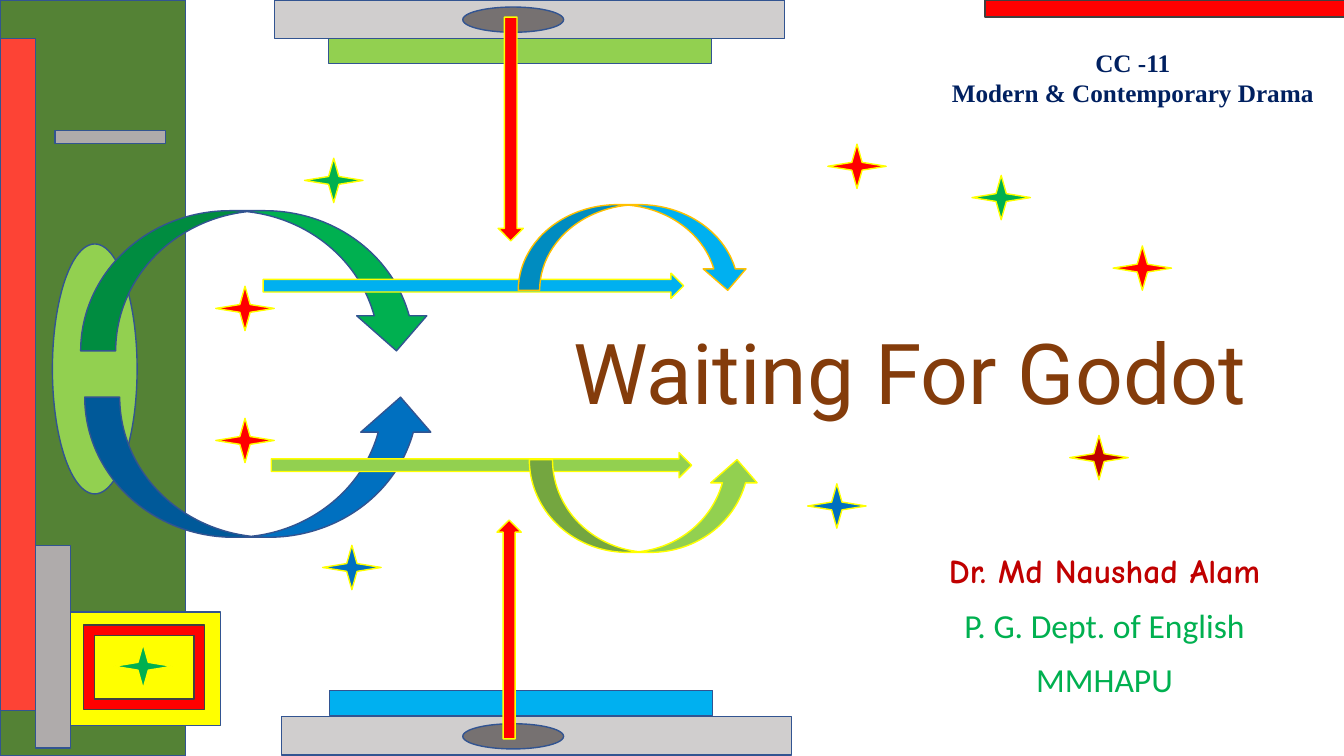
from pptx import Presentation
from pptx.dml.color import RGBColor
from pptx.enum.shapes import MSO_SHAPE
from pptx.enum.text import MSO_ANCHOR, PP_ALIGN
from pptx.util import Emu, Pt

RECT, OVAL = MSO_SHAPE.RECTANGLE, MSO_SHAPE.OVAL
FRAME, MINUS = MSO_SHAPE.FRAME, MSO_SHAPE.MATH_MINUS
STAR = MSO_SHAPE.STAR_4_POINT
RIGHT, DOWN, UP = MSO_SHAPE.RIGHT_ARROW, MSO_SHAPE.DOWN_ARROW, MSO_SHAPE.UP_ARROW
CURVE_DOWN, CURVE_UP = MSO_SHAPE.CURVED_DOWN_ARROW, MSO_SHAPE.CURVED_UP_ARROW
TOP, BOTTOM = MSO_ANCHOR.TOP, MSO_ANCHOR.BOTTOM
CENTER = PP_ALIGN.CENTER

SCALE = 9144  # EMU per px, 100 px to the inch
WIDTH, HEIGHT = 1333, 750
NAVY, DARK, YELLOW, GOLD = "325491", "404040", "FFFF00", "FFC000"
RED, CRIMSON, GREEN, LIME = "FF0000", "C00000", "00B050", "92D050"
BLUE, SKY, GRAY = "0070C0", "00B0F0", "AFABAB"


def px(count):
    return Emu(count * SCALE)


def color(code):
    return RGBColor.from_string(code)


def draw(slide, kind, box, fill, line=NAVY):
    shape = slide.shapes.add_shape(kind, *map(px, box))
    shape.shadow.inherit = False
    shape.fill.solid()
    shape.fill.fore_color.rgb = color(fill)
    shape.line.color.rgb = color(line)
    shape.line.width = Pt(1)


def write(slide, box, lines, wrap=True, anchor=TOP, before=0, bottom=5, spacing=1.0):
    """Each line is (text, font, size, color, bold)."""
    frame = slide.shapes.add_textbox(*map(px, box)).text_frame
    frame.word_wrap = wrap
    frame.vertical_anchor = anchor
    frame.margin_bottom = px(bottom)
    for i, (text, font, size, tint, bold) in enumerate(lines):
        para = frame.add_paragraph() if i else frame.paragraphs[0]
        para.text = text
        para.alignment = CENTER
        para.space_before = Pt(before)
        para.line_spacing = spacing
        para.font.name = font
        para.font.size = Pt(size)
        para.font.bold = bold
        para.font.color.rgb = color(tint)


def panel(slide, x, y, w, h):
    # Green band with its oval and the two large curved arrows
    draw(slide, RECT, (x, y, w, h), "548235")
    draw(slide, OVAL, (x + 52, y + 242, 84, 248), LIME)
    draw(slide, CURVE_DOWN, (x + 80, y + 209, 348, 139), GREEN)
    draw(slide, CURVE_UP, (x + 84, y + 394, 348, 139), BLUE)
    # Edge bars, dash and framed badge
    draw(slide, RECT, (x, y + 38, 35, 667), "FD4335")
    draw(slide, RECT, (x + 35, y + 541, 35, 201), GRAY)
    draw(slide, MINUS, (x + 35, y + 109, 149, 54), GRAY)
    draw(slide, RECT, (x + 70, y + 607, 149, 113), YELLOW)
    draw(slide, FRAME, (x + 83, y + 620, 120, 84), RED, DARK)


def flow(slide, x, y, fill, kind, curve, line):
    # Straight arrow with a small curved one; curve is relative to it
    dx, dy, h = curve
    draw(slide, RIGHT, (x, y, 417, 25), fill, YELLOW)
    draw(slide, kind, (x + dx, y + dy, 229, h), fill, line)


def press(slide, x, y, hub, pad, fill, kind, arrow):
    # Gray base with oval hub, colored pad and a vertical arrow
    draw(slide, RECT, (x, y, 506, 38), "D0CECE")
    draw(slide, OVAL, (x + hub, y + 7, 100, 25), "767171")
    draw(slide, RECT, (x + pad[0], y + pad[1], 380, 25), fill)
    dx, dy, w, h = arrow
    draw(slide, kind, (x + dx, y + dy, w, h), RED, YELLOW)


def stars(slide, x, y):
    spots = {
        RED: [(214, 284), (214, 415), (821, 143), (1104, 244)],
        GREEN: [(302, 157), (113, 639), (964, 174)],
        BLUE: [(320, 541), (801, 480)],
        CRIMSON: [(1061, 432)],
    }
    for fill, places in spots.items():
        for dx, dy in places:
            draw(slide, STAR, (x + dx, y + dy, 58, 44), fill, YELLOW)


def words(slide, x, y):
    # Course, title and author
    draw(slide, RECT, (x + 497, y, 357, 17), RED, DARK)
    course = ("Times New Roman", 18, "002060", True)
    write(slide, (x + 452, y + 42, 383, 71),
          [("CC -11", *course), ("Modern & Contemporary Drama", *course)], wrap=False)
    write(slide, (x, y + 289, 845, 180),
          [("Waiting For Godot", "Roboto", 60, "843C0B", False)],
          anchor=BOTTOM, bottom=50, spacing=0.9)
    school = ("Calibri", 24, GREEN, False)
    write(slide, (x + 430, y + 541, 371, 113),
          [("Dr. Md Naushad Alam", "Comic Neue", 24, CRIMSON, True),
           ("P. G. Dept. of English", *school), ("MMHAPU", *school)], before=10)


def main():
    deck = Presentation()
    deck.slide_width, deck.slide_height = px(WIDTH), px(HEIGHT)
    slide = deck.slides.add_slide(deck.slide_layouts[6])
    panel(slide, 0, 0, 184, HEIGHT)
    flow(slide, 261, 271, SKY, CURVE_DOWN, (253, -68, 85), GOLD)
    flow(slide, 269, 449, LIME, CURVE_UP, (256, 7, 92), YELLOW)
    press(slide, 272, 0, 187, (54, 38), LIME, DOWN, (222, 17, 25, 222))
    press(slide, 279, 711, 180, (48, -26), SKY, UP, (214, -195, 24, 217))
    stars(slide, 0, 0)
    words(slide, 480, 0)
    deck.save("out.pptx")


if __name__ == "__main__":
    main()
